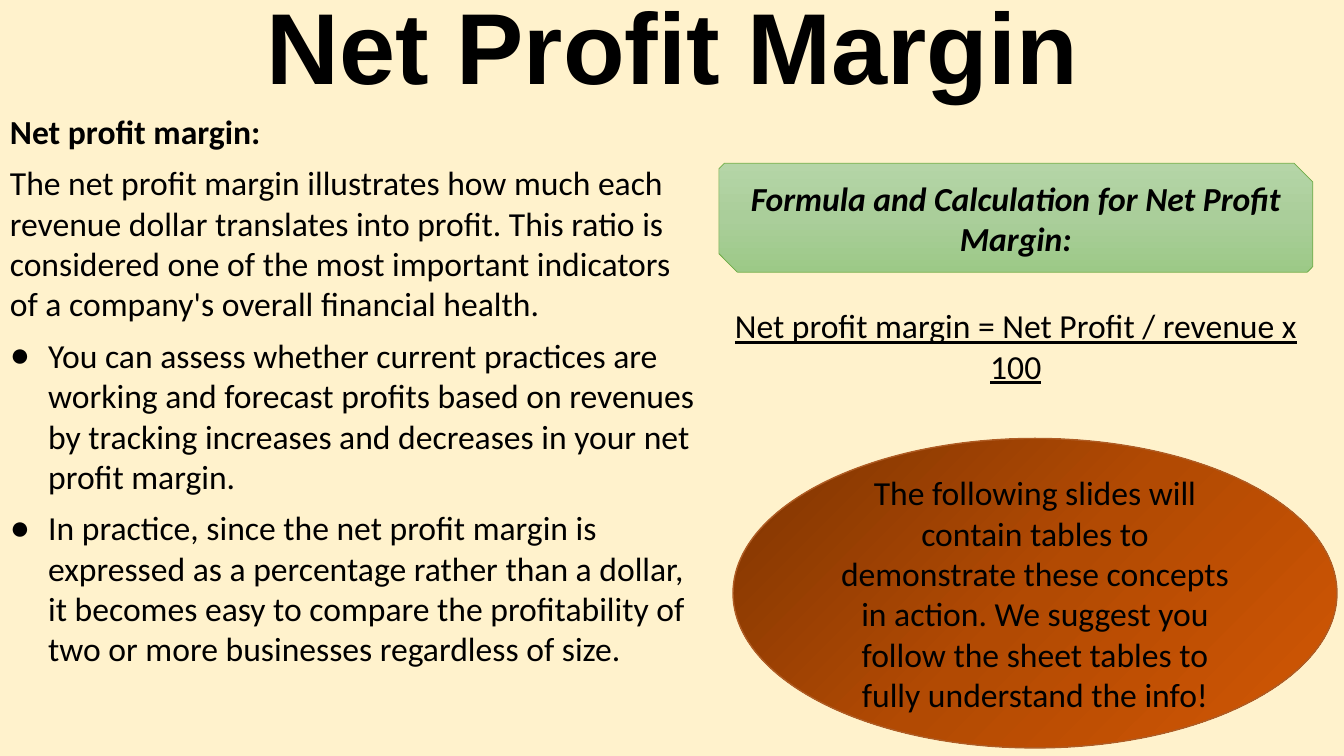
import copy

import pptx
import pptx.dml.color
import pptx.enum.shapes
import pptx.enum.text
import pptx.oxml
import pptx.oxml.ns
import pptx.util

Inches = pptx.util.Inches
Pt = pptx.util.Pt
Shapes = pptx.enum.shapes.MSO_SHAPE
Align = pptx.enum.text.PP_ALIGN
Anchor = pptx.enum.text.MSO_ANCHOR
AutoSize = pptx.enum.text.MSO_AUTO_SIZE


def color(hex_value):
    return pptx.dml.color.RGBColor.from_string(hex_value)


def write(paragraph, text, size=24, font="Calibri", bold=False, italic=False,
          underline=False, align=Align.CENTER, after=0, spacing=1.0):
    paragraph.alignment = align
    paragraph.space_before = Pt(0)
    paragraph.space_after = Pt(after)
    paragraph.line_spacing = spacing
    run = paragraph.add_run()
    run.text = text
    run.font.size = Pt(size)
    run.font.name = font
    run.font.bold = bold
    run.font.italic = italic
    run.font.underline = underline
    run.font.color.rgb = color("000000")


def add_bullet(paragraph, symbol="●", indent=0.38):
    properties = paragraph._p.get_or_add_pPr()
    properties.set("marL", str(Inches(indent)))
    properties.set("indent", str(-Inches(indent)))
    namespace = pptx.oxml.ns.nsdecls("a")
    for markup in (f'<a:buFont {namespace} typeface="Arial"/>',
                   f'<a:buChar {namespace} char="{symbol}"/>'):
        properties.append(pptx.oxml.parse_xml(markup))


def prepare_frame(shape, anchor=Anchor.TOP, auto_size=AutoSize.NONE):
    frame = shape.text_frame
    frame.word_wrap = True
    frame.vertical_anchor = anchor
    frame.auto_size = auto_size
    return frame


def add_text_box(slide, box):
    text_box = slide.shapes.add_textbox(*map(Inches, box))
    return prepare_frame(text_box, auto_size=AutoSize.SHAPE_TO_FIT_TEXT)


def add_gradient_shape(slide, box, preset, stops, angle, outline, width):
    shape = slide.shapes.add_shape(preset, *map(Inches, box))
    shape.shadow.inherit = False
    shape.fill.gradient()
    shape.fill.gradient_angle = 360 - angle
    stop_list = shape._element.spPr.find(".//" + pptx.oxml.ns.qn("a:gsLst"))
    stop_list.append(copy.deepcopy(stop_list[0]))
    for stop, (position, shade) in zip(shape.fill.gradient_stops, stops):
        stop.position = position
        stop.color.rgb = color(shade)
    shape.line.color.rgb = color(outline)
    shape.line.width = Pt(width)
    return shape


def place_title(slide, box):
    title = slide.shapes.title
    title.left, title.top, title.width, title.height = map(Inches, box)
    frame = prepare_frame(title, anchor=Anchor.MIDDLE)
    write(frame.paragraphs[0], "Net Profit Margin", size=72, font="Arial",
          bold=True, spacing=0.9)


def add_explanation(slide, box):
    frame = add_text_box(slide, box)
    write(frame.paragraphs[0], "Net profit margin:", bold=True,
          align=Align.LEFT, after=8)
    definition = (
        "The net profit margin illustrates how much each revenue dollar "
        "translates into profit. This ratio is considered one of the most "
        "important indicators of a company's overall financial health.")
    write(frame.add_paragraph(), definition, align=Align.LEFT, after=8)
    benefits = [
        "You can assess whether current practices are working and forecast "
        "profits based on revenues by tracking increases and decreases in "
        "your net profit margin.",
        "In practice, since the net profit margin is expressed as a "
        "percentage rather than a dollar, it becomes easy to compare the "
        "profitability of two or more businesses regardless of size.",
    ]
    for benefit in benefits:
        paragraph = frame.add_paragraph()
        write(paragraph, benefit, align=Align.LEFT, after=8)
        add_bullet(paragraph)


def add_formula_heading(slide, box):
    heading = add_gradient_shape(
        slide, box, Shapes.SNIP_2_DIAG_RECTANGLE,
        [(0, "B5D5A7"), (0.5, "AACE9A"), (1, "9CC987")], 90, "70AD47", 0.5)
    heading.adjustments[0] = 0.05
    heading.adjustments[1] = 0.17
    frame = prepare_frame(heading, auto_size=AutoSize.SHAPE_TO_FIT_TEXT)
    write(frame.paragraphs[0],
          "Formula and Calculation for Net Profit Margin:",
          bold=True, italic=True)


def add_formula(slide, box):
    frame = add_text_box(slide, box)
    write(frame.paragraphs[0],
          "Net profit margin = Net Profit / revenue x 100", underline=True)


def add_tables_note(slide, box):
    note = add_gradient_shape(
        slide, box, Shapes.OVAL,
        [(0, "7D3402"), (0.5, "B24A03"), (1, "D35704")], 45, "AF5C24", 1)
    frame = prepare_frame(note, anchor=Anchor.MIDDLE)
    write(frame.paragraphs[0],
          "The following slides will contain tables to demonstrate these "
          "concepts in action. We suggest you follow the sheet tables to "
          "fully understand the info!")


def main():
    presentation = pptx.Presentation()
    presentation.slide_width = Inches(13.33)
    presentation.slide_height = Inches(7.5)
    title_only = presentation.slide_layouts.get_by_name("Title Only")
    slide = presentation.slides.add_slide(title_only)
    slide.background.fill.solid()
    slide.background.fill.fore_color.rgb = color("FFF2CC")
    place_title(slide, (0.46, -0.21, 12.42, 1.45))
    add_explanation(slide, (0, 1.05, 7.03, 5.69))
    add_formula_heading(slide, (7.13, 1.62, 5.89, 1.08))
    add_formula(slide, (7.06, 2.98, 6.03, 0.91))
    add_tables_note(slide, (7.27, 4.35, 5.99, 3.07))
    presentation.save("out.pptx")


if __name__ == "__main__":
    main()
